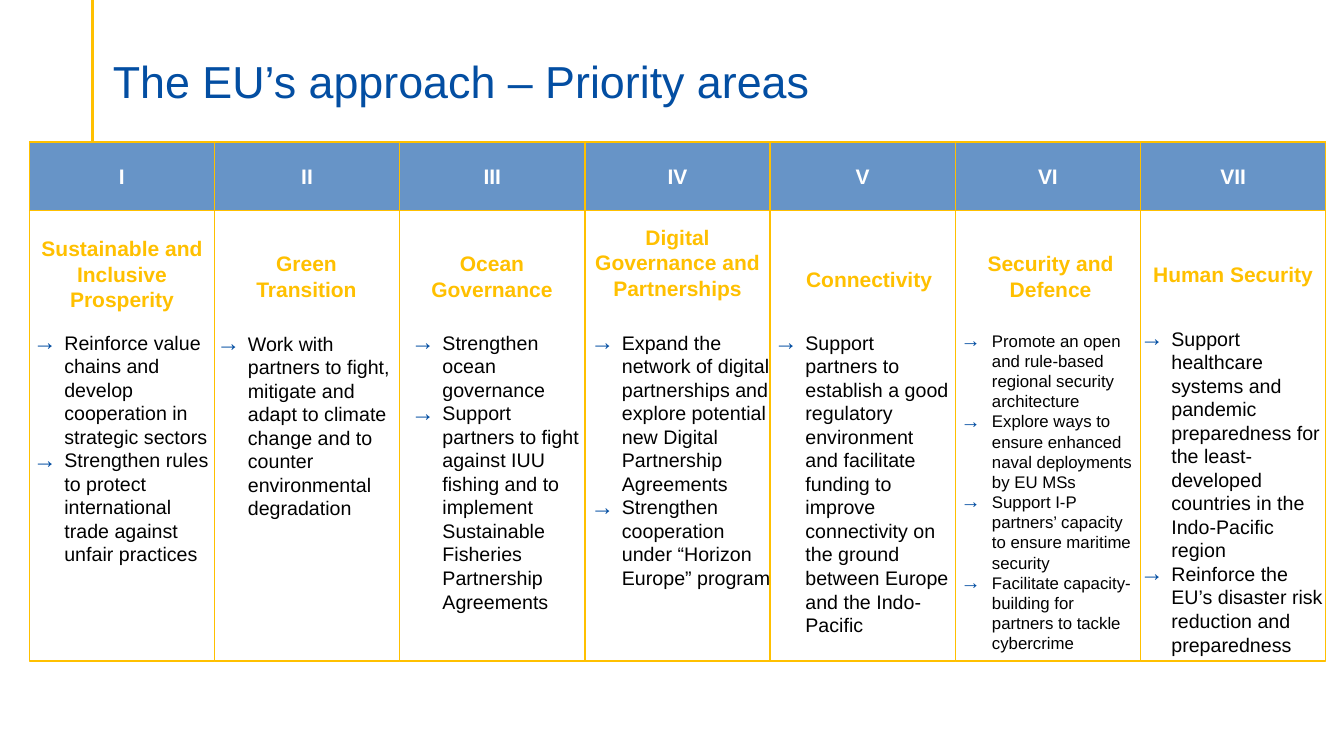
"""Build a slide with the seven priority areas of the EU's approach."""
from dataclasses import dataclass

from lxml.etree import SubElement
from pptx import Presentation
from pptx.dml.color import RGBColor
from pptx.enum.shapes import MSO_CONNECTOR, MSO_SHAPE
from pptx.enum.text import MSO_ANCHOR, MSO_AUTO_SIZE, PP_ALIGN
from pptx.oxml.ns import qn
from pptx.util import Inches, Pt

COLORS = {"blue": "034EA2", "gold": "FFC000", "white": "FFFFFF", "black": "000000"}
TABLE_LEFT, TABLE_TOP = 0.29, 1.41
COLUMN_WIDTH = 12.86 / 7
COLUMN_HEIGHT, HEADER_HEIGHT = 5.15, 0.68
BULLET_INDENT = 0.31


@dataclass(frozen=True)
class Box:
    left: float
    top: float
    width: float
    height: float

    def lengths(self) -> list:
        return [Inches(value) for value in (self.left, self.top, self.width, self.height)]


@dataclass(frozen=True)
class PriorityArea:
    numeral: str
    heading: str
    heading_box: Box
    actions: tuple[str, ...]
    actions_box: Box
    actions_size: int = 14


AREAS = (
    PriorityArea(
        "I", "Sustainable and Inclusive Prosperity", Box(0.29, 2.29, 1.84, 0.85),
        ("Reinforce value chains and develop cooperation in strategic sectors",
         "Strengthen rules to protect international trade against unfair practices"),
        Box(0.23, 3.23, 1.95, 2.42)),
    PriorityArea(
        "II", "Green Transition", Box(2.12, 2.44, 1.84, 0.6),
        ("Work with partners to fight, mitigate and adapt to climate change "
         "and to counter environmental degradation",),
        Box(2.05, 3.24, 1.95, 1.96)),
    PriorityArea(
        "III", "Ocean Governance", Box(3.96, 2.44, 1.84, 0.6),
        ("Strengthen ocean governance",
         "Support partners to fight against IUU fishing and to implement "
         "Sustainable Fisheries Partnership Agreements"),
        Box(3.98, 3.23, 1.95, 2.89)),
    PriorityArea(
        "IV", "Digital Governance and Partnerships", Box(5.8, 2.18, 1.84, 1.1),
        ("Expand the network of digital partnerships and explore potential "
         "new Digital Partnership Agreements",
         "Strengthen cooperation under “Horizon Europe” program"),
        Box(5.76, 3.23, 2.02, 2.65)),
    PriorityArea(
        "V", "Connectivity", Box(7.7, 2.59, 1.84, 0.35),
        ("Support partners to establish a good regulatory environment and "
         "facilitate funding to improve connectivity on the ground between "
         "Europe and the Indo-Pacific",),
        Box(7.58, 3.23, 1.95, 3.12)),
    PriorityArea(
        "VI", "Security and Defence", Box(9.5, 2.44, 1.84, 0.6),
        ("Promote an open and rule-based regional security architecture",
         "Explore ways to ensure enhanced naval deployments by EU MSs",
         "Support I-P partners’ capacity to ensure maritime security",
         "Facilitate capacity-building for partners to tackle cybercrime"),
        Box(9.43, 3.23, 1.95, 3.29), 12),
    PriorityArea(
        "VII", "Human Security", Box(11.31, 2.54, 1.84, 0.35),
        ("Support healthcare systems and pandemic preparedness for the "
         "least-developed countries in the Indo-Pacific region",
         "Reinforce the EU’s disaster risk reduction and preparedness"),
        Box(11.21, 3.19, 2.1, 3.35)),
)


def color(name: str) -> RGBColor:
    return RGBColor.from_string(COLORS[name])


def add_arrow_bullet(paragraph) -> None:
    properties = paragraph._p.get_or_add_pPr()
    properties.set("marL", str(Inches(BULLET_INDENT)))
    properties.set("indent", str(-Inches(BULLET_INDENT)))
    bullet_color = SubElement(properties, qn("a:buClr"))
    SubElement(bullet_color, qn("a:srgbClr"), val=COLORS["blue"])
    SubElement(properties, qn("a:buSzPct"), val="120000")
    SubElement(properties, qn("a:buFont"), typeface="Arial")
    SubElement(properties, qn("a:buChar"), char="→")


def write_text(shape, *texts: str, size: float, ink: str, bold: bool = False,
               alignment=PP_ALIGN.LEFT, anchor=MSO_ANCHOR.TOP, bulleted: bool = False,
               grow: bool = False, line_spacing: float = 1.0) -> None:
    frame = shape.text_frame
    frame.word_wrap = True
    frame.auto_size = MSO_AUTO_SIZE.SHAPE_TO_FIT_TEXT if grow else MSO_AUTO_SIZE.NONE
    frame.vertical_anchor = anchor
    for index, text in enumerate(texts):
        paragraph = frame.add_paragraph() if index else frame.paragraphs[0]
        paragraph.alignment = alignment
        paragraph.line_spacing = line_spacing
        if bulleted:
            add_arrow_bullet(paragraph)
        run = paragraph.add_run()
        run.text = text
        run.font.name = "Arial"
        run.font.size = Pt(size)
        run.font.bold = bold
        run.font.color.rgb = color(ink)


def add_panel(slide, box: Box, fill: str, opacity: int = 100):
    shape = slide.shapes.add_shape(MSO_SHAPE.RECTANGLE, *box.lengths())
    shape.shadow.inherit = False
    shape.fill.solid()
    shape.fill.fore_color.rgb = color(fill)
    if opacity < 100:
        fill_color = shape._element.spPr.find(qn("a:solidFill")).find(qn("a:srgbClr"))
        SubElement(fill_color, qn("a:alpha"), val=str(opacity * 1000))
    shape.line.color.rgb = color("gold")
    shape.line.width = Pt(1)
    return shape


def add_title(slide) -> None:
    rule = slide.shapes.add_connector(
        MSO_CONNECTOR.STRAIGHT, Inches(0.92), Inches(0), Inches(0.92), Inches(1.4))
    rule.line.color.rgb = color("gold")
    rule.line.width = Pt(2.25)
    SubElement(rule._element.spPr, qn("a:effectLst"))
    title = slide.shapes.add_textbox(*Box(1.02, 0.21, 12.31, 0.86).lengths())
    title.text_frame.margin_bottom = 0
    write_text(title, "The EU’s approach – Priority areas", size=32, ink="blue",
               anchor=MSO_ANCHOR.BOTTOM, line_spacing=0.9)


def add_area_text(slide, area: PriorityArea) -> None:
    heading = slide.shapes.add_textbox(*area.heading_box.lengths())
    write_text(heading, area.heading, size=15, ink="gold", bold=True,
               alignment=PP_ALIGN.CENTER, grow=True)
    actions = slide.shapes.add_textbox(*area.actions_box.lengths())
    write_text(actions, *area.actions, size=area.actions_size, ink="black",
               bulleted=True, grow=True)


def main() -> None:
    presentation = Presentation()
    presentation.slide_width = Inches(13.33)
    presentation.slide_height = Inches(7.5)
    slide = presentation.slides.add_slide(presentation.slide_layouts[6])
    add_title(slide)
    lefts = [TABLE_LEFT + index * COLUMN_WIDTH for index in range(len(AREAS))]
    for left in lefts:
        add_panel(slide, Box(left, TABLE_TOP, COLUMN_WIDTH, COLUMN_HEIGHT), "white")
    for left, area in zip(lefts, AREAS):
        header = add_panel(
            slide, Box(left, TABLE_TOP, COLUMN_WIDTH, HEADER_HEIGHT), "blue", opacity=60)
        write_text(header, area.numeral, size=15, ink="white", bold=True,
                   alignment=PP_ALIGN.CENTER, anchor=MSO_ANCHOR.MIDDLE)
    for area in AREAS:
        add_area_text(slide, area)
    presentation.save("out.pptx")


if __name__ == "__main__":
    main()
